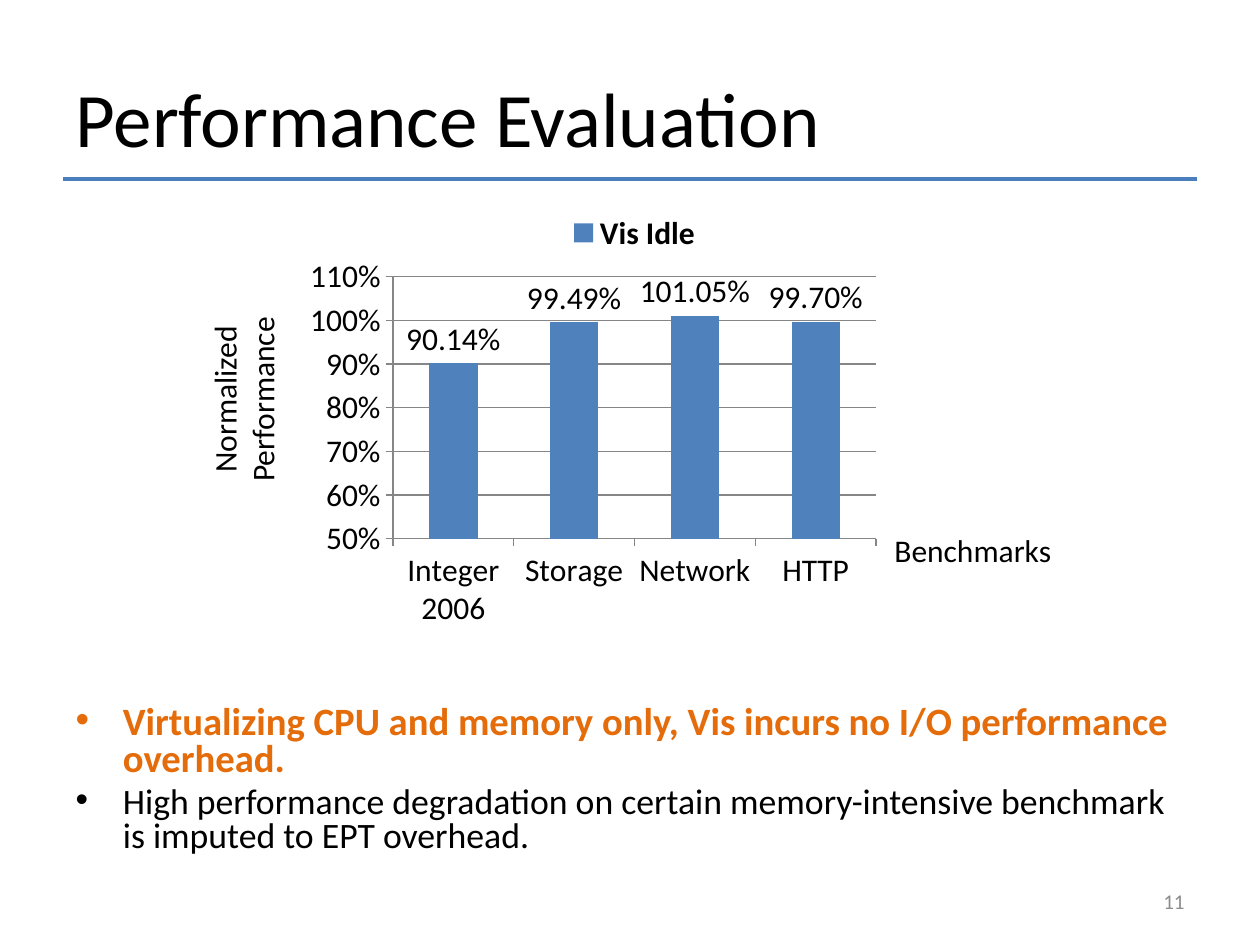
from dataclasses import dataclass

from lxml.etree import SubElement
from pptx import Presentation
from pptx.chart.data import CategoryChartData
from pptx.dml.color import RGBColor
from pptx.enum.chart import XL_CHART_TYPE, XL_LABEL_POSITION, XL_LEGEND_POSITION, XL_TICK_MARK
from pptx.enum.shapes import MSO_CONNECTOR
from pptx.enum.text import MSO_ANCHOR, MSO_AUTO_SIZE, PP_ALIGN
from pptx.oxml import parse_xml
from pptx.oxml.ns import nsdecls, qn
from pptx.util import Emu, Pt

PX_PER_INCH = 126
FONT = "Calibri"
BLACK, GRAY, ORANGE = "000000", "8C8C8C", "E46C0A"
RULE_BLUE, BAR_BLUE, AXIS_GRAY = "4B7EBC", "4F81BD", "868686"


@dataclass(frozen=True)
class Box:
    left: int
    top: int
    width: int
    height: int

    def emu(self) -> list[Emu]:
        return [px(n) for n in (self.left, self.top, self.width, self.height)]


@dataclass(frozen=True)
class Label:
    box: Box
    lines: tuple[str, ...]
    size: int = 18
    color: str = BLACK
    align: PP_ALIGN = PP_ALIGN.LEFT
    anchor: MSO_ANCHOR = MSO_ANCHOR.TOP
    vertical: bool = False


@dataclass(frozen=True)
class Bullet:
    text: str
    size: float
    color: str
    bold: bool


LABELS = (
    Label(Box(903, 876, 294, 50), ("11",), 12, GRAY, PP_ALIGN.RIGHT, MSO_ANCHOR.MIDDLE),
    Label(Box(199, 310, 102, 179), ("Normalized", "Performance"),
          align=PP_ALIGN.CENTER, vertical=True),
    Label(Box(882, 525, 184, 50), ("Benchmarks",)),
)
BULLETS = (
    Bullet("Virtualizing CPU and memory only, Vis incurs no I/O performance overhead.",
           22.1, ORANGE, True),
    Bullet("High performance degradation on certain memory-intensive benchmark "
           "is imputed to EPT overhead.", 20.4, BLACK, False),
)
RESULTS = {"Integer 2006": 0.9014, "Storage": 0.9949, "Network": 1.0105, "HTTP": 0.997}


def px(length: int) -> Emu:
    return Emu(round(length * 914400 / PX_PER_INCH))


def rgb(color: str) -> RGBColor:
    return RGBColor.from_string(color)


def style_font(font, size: float, color: str, bold: bool = False) -> None:
    font.name, font.size, font.bold = FONT, Pt(size), bold
    font.color.rgb = rgb(color)


def place(shape, box: Box) -> None:
    shape.left, shape.top, shape.width, shape.height = box.emu()


def add_rule(slide) -> None:
    rule = slide.shapes.add_connector(MSO_CONNECTOR.STRAIGHT, px(63), px(179), px(1197), px(179))
    rule.line.color.rgb = rgb(RULE_BLUE)
    rule.line.width = Pt(2)
    SubElement(rule._element.spPr, qn("a:effectLst"))


def fill_title(slide) -> None:
    title = slide.shapes.title
    place(title, Box(63, 38, 1134, 157))
    frame = title.text_frame
    frame.text = "Performance Evaluation"
    frame.vertical_anchor = MSO_ANCHOR.MIDDLE
    paragraph = frame.paragraphs[0]
    paragraph.alignment = PP_ALIGN.LEFT
    style_font(paragraph.runs[0].font, 44, BLACK)


def fill_bullets(slide) -> None:
    body = slide.placeholders[1]
    place(body, Box(63, 699, 1134, 173))
    frame = body.text_frame
    frame.auto_size = MSO_AUTO_SIZE.NONE
    frame.text = "\n".join(bullet.text for bullet in BULLETS)
    for paragraph, bullet in zip(frame.paragraphs, BULLETS):
        paragraph.line_spacing = 0.8
        style_font(paragraph.runs[0].font, bullet.size, bullet.color, bullet.bold)


def add_label(slide, label: Label) -> None:
    frame = slide.shapes.add_textbox(*label.box.emu()).text_frame
    frame.text = "\n".join(label.lines)
    frame.word_wrap = label.align == PP_ALIGN.RIGHT
    frame.vertical_anchor = label.anchor
    if label.vertical:
        frame._txBody.bodyPr.set("vert", "vert270")
    for paragraph in frame.paragraphs:
        paragraph.alignment = label.align
        style_font(paragraph.runs[0].font, label.size, label.color)


def set_layout(element, position: int, inner: bool, **fractions: float) -> None:
    """Give a plot area or legend a fixed place, as fractions of the chart."""
    for old in element.findall(qn("c:layout")):
        element.remove(old)
    target = '<c:layoutTarget val="inner"/>' if inner else ""
    modes = '<c:xMode val="edge"/><c:yMode val="edge"/>'
    values = "".join(f'<c:{name} val="{value}"/>' for name, value in fractions.items())
    element.insert(position, parse_xml(
        f'<c:layout {nsdecls("c")}><c:manualLayout>{target}{modes}{values}'
        "</c:manualLayout></c:layout>"))


def add_benchmark_chart(slide) -> None:
    data = CategoryChartData(number_format="0.00%")
    data.categories = list(RESULTS)
    data.add_series("Vis Idle", list(RESULTS.values()))
    chart = slide.shapes.add_chart(
        XL_CHART_TYPE.COLUMN_CLUSTERED, *Box(221, 179, 819, 514).emu(), data).chart
    chart.has_title = False
    style_font(chart.font, 18, BLACK)

    chart.has_legend = True
    chart.legend.position = XL_LEGEND_POSITION.RIGHT
    chart.legend.include_in_layout = False
    style_font(chart.legend.font, 18, BLACK, bold=True)
    set_layout(chart.legend._element, 1, False, x=0.42, y=0.06, w=0.17, h=0.09)
    set_layout(chart._chartSpace.chart.plotArea, 0, True, x=0.21, y=0.19, w=0.59, h=0.51)

    values = chart.value_axis
    values.minimum_scale, values.maximum_scale, values.major_unit = 0.5, 1.1, 0.1
    values.tick_labels.number_format = "0%"
    values.tick_labels.number_format_is_linked = False
    values.has_major_gridlines = True
    for axis in (values, chart.category_axis):
        axis.major_tick_mark = XL_TICK_MARK.OUTSIDE
        axis.format.line.color.rgb = rgb(AXIS_GRAY)
    values.major_gridlines.format.line.color.rgb = rgb(AXIS_GRAY)

    plot = chart.plots[0]
    plot.gap_width = 150
    plot.vary_by_categories = False
    series = plot.series[0]
    series.format.fill.solid()
    series.format.fill.fore_color.rgb = rgb(BAR_BLUE)
    labels = series.data_labels
    labels.show_value = True
    labels.number_format = "0.00%"
    labels.number_format_is_linked = False
    labels.position = XL_LABEL_POSITION.OUTSIDE_END
    style_font(labels.font, 18, BLACK)


def main() -> None:
    presentation = Presentation()
    presentation.slide_width, presentation.slide_height = px(1260), px(945)
    slide = presentation.slides.add_slide(presentation.slide_layouts[1])
    add_rule(slide)
    fill_title(slide)
    fill_bullets(slide)
    add_benchmark_chart(slide)
    for label in LABELS:
        add_label(slide, label)
    presentation.save("out.pptx")


if __name__ == "__main__":
    main()
